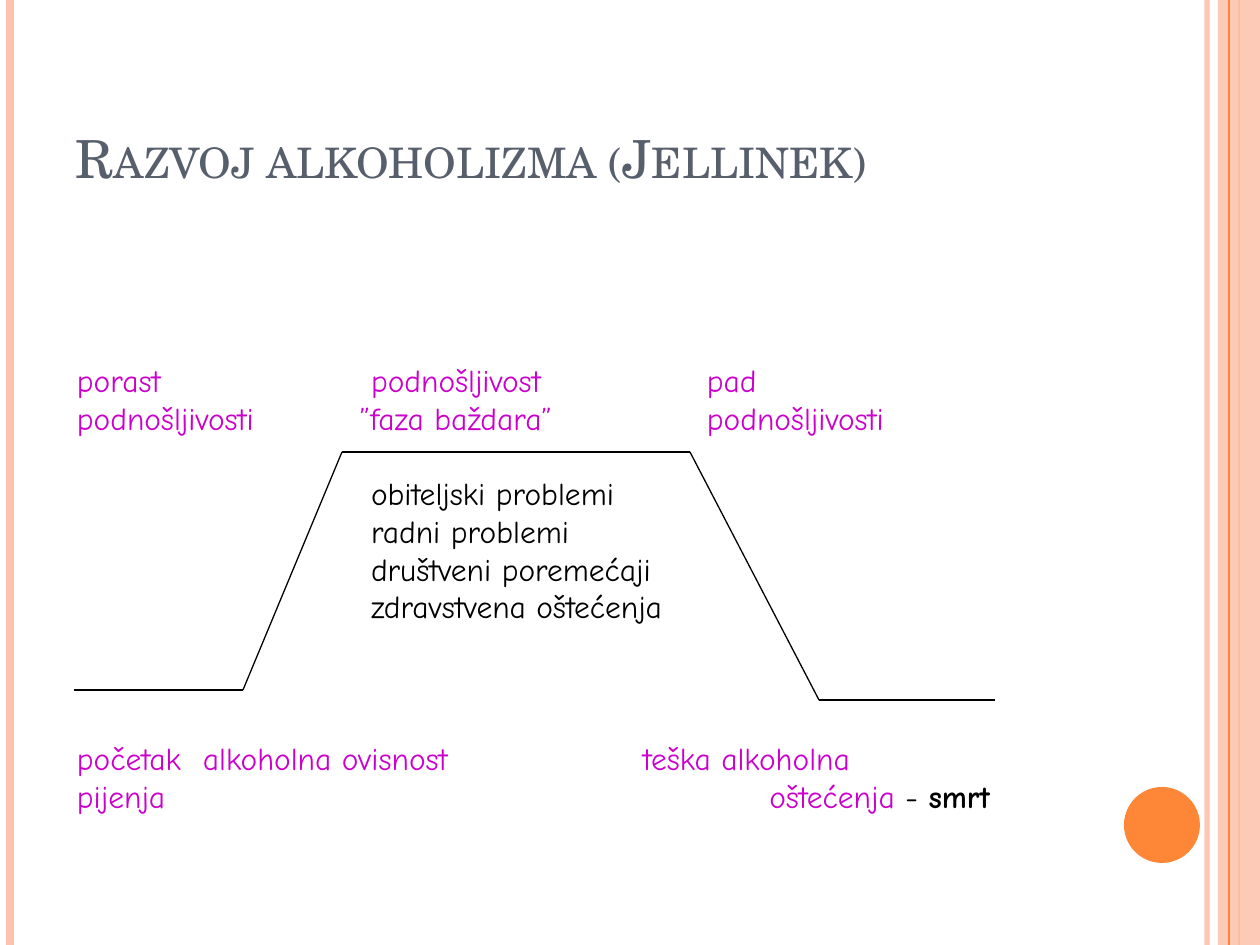
from lxml import etree
from pptx import Presentation
from pptx.dml.color import RGBColor
from pptx.enum.shapes import MSO_CONNECTOR, MSO_SHAPE
from pptx.enum.text import MSO_ANCHOR, PP_ALIGN
from pptx.oxml.ns import qn
from pptx.util import Emu, Pt

STRAIGHT = MSO_CONNECTOR.STRAIGHT
RECT, OVAL = MSO_SHAPE.RECTANGLE, MSO_SHAPE.OVAL
BOTTOM, TOP = MSO_ANCHOR.BOTTOM, MSO_ANCHOR.TOP
LEFT, CENTER, RIGHT = PP_ALIGN.LEFT, PP_ALIGN.CENTER, PP_ALIGN.RIGHT
PEACH = RGBColor(0xFE, 0xC3, 0xAE)
ORANGE = RGBColor(0xFE, 0x86, 0x37)
SLATE = RGBColor(0x57, 0x5F, 0x6D)
PURPLE = RGBColor(0xCC, 0x00, 0xCC)
BLACK = RGBColor(0, 0, 0)
SERIF, COMIC = "TeX Gyre Schola", "Comic Neue"
PX = 914400 / 126

deck = Presentation()
deck.slide_width, deck.slide_height = Emu(int(1260 * PX)), Emu(int(945 * PX))
slide = deck.slides.add_slide(deck.slide_layouts[6])
shapes = slide.shapes


def add_line(start, end, color, width):
    ends = [Emu(int(n * PX)) for n in (*start, *end)]
    line = shapes.add_connector(STRAIGHT, *ends)
    line.line.color.rgb = color
    line.line.width = Pt(width)
    etree.SubElement(line._element.spPr, qn("a:effectLst"))
    return line


def add_text(spot, rows, size, face, color, align=LEFT, anchor=TOP):
    box = shapes.add_textbox(*[Emu(int(n * PX)) for n in spot])
    frame = box.text_frame
    frame.margin_left = frame.margin_right = 0
    frame.margin_top = frame.margin_bottom = 0
    frame.word_wrap = True
    frame.vertical_anchor = anchor
    frame.text = "\n".join(rows)
    for par in frame.paragraphs:
        par.alignment = align
        for run in par.runs:
            run.font.size = Pt(size)
            run.font.name = face
            run.font.color.rgb = color
    return frame


rails = [(1207, PEACH, 3), (10, PEACH, 4.5), (1239, ORANGE, 1.5), (1229, ORANGE, 0.75)]
for x, color, width in rails:
    add_line((x, 0), (x, 945), color, width)

for kind, spot, color in [
    (RECT, (1218, 0, 42, 945), PEACH),
    (OVAL, (1124, 787, 76, 76), ORANGE),
]:
    shape = shapes.add_shape(kind, *[Emu(int(n * PX)) for n in spot])
    shape.shadow.inherit = False
    shape.fill.solid()
    shape.fill.fore_color.rgb = color
    shape.line.fill.background()
    if kind == RECT:
        tint = shape._element.spPr.find(".//" + qn("a:srgbClr"))
        etree.SubElement(tint, qn("a:alpha")).set("val", "87000")
        band = shape

rail = shapes[0]._element
tint = rail.spPr.find(".//" + qn("a:srgbClr"))
etree.SubElement(tint, qn("a:alpha")).set("val", "93000")
shapes[3]._element.addprevious(band._element)

title = add_text((76, 38, 1004, 151), ["Razvoj alkoholizma (Jellinek)"],
                 30, SERIF, SLATE, anchor=BOTTOM)
title.paragraphs[0].runs[0]._r.get_or_add_rPr().set("cap", "small")

for spot, rows, color, align in [
    ((77, 361, 220, 76), ["porast", "podnošljivosti"], PURPLE, LEFT),
    ((336, 361, 240, 76), ["podnošljivost", "”faza baždara”"], PURPLE, CENTER),
    ((707, 361, 220, 76), ["pad", "podnošljivosti"], PURPLE, LEFT),
    ((371, 474, 320, 151), ["obiteljski problemi", "radni problemi",
                            "društveni poremećaji", "zdravstvena oštećenja"], BLACK, LEFT),
    ((77, 739, 120, 76), ["početak", "pijenja"], PURPLE, LEFT),
    ((203, 739, 280, 38), ["alkoholna ovisnost"], PURPLE, LEFT),
]:
    add_text(spot, rows, 18, COMIC, color, align)

final = add_text((643, 739, 347, 76), ["teška alkoholna", "oštećenja "],
                 18, COMIC, PURPLE)
last = final.paragraphs[1]
last.alignment = RIGHT
for word, bold in [("- ", False), ("smrt", True)]:
    run = last.add_run()
    run.text = word
    run.font.size = Pt(18)
    run.font.name = COMIC
    run.font.bold = bold
    run.font.color.rgb = BLACK

curve = [(74, 690), (243, 690), (342, 452), (690, 452), (819, 700), (995, 700)]
for start, end in zip(curve, curve[1:]):
    add_line(start, end, BLACK, 0.75)

deck.save("out.pptx")
